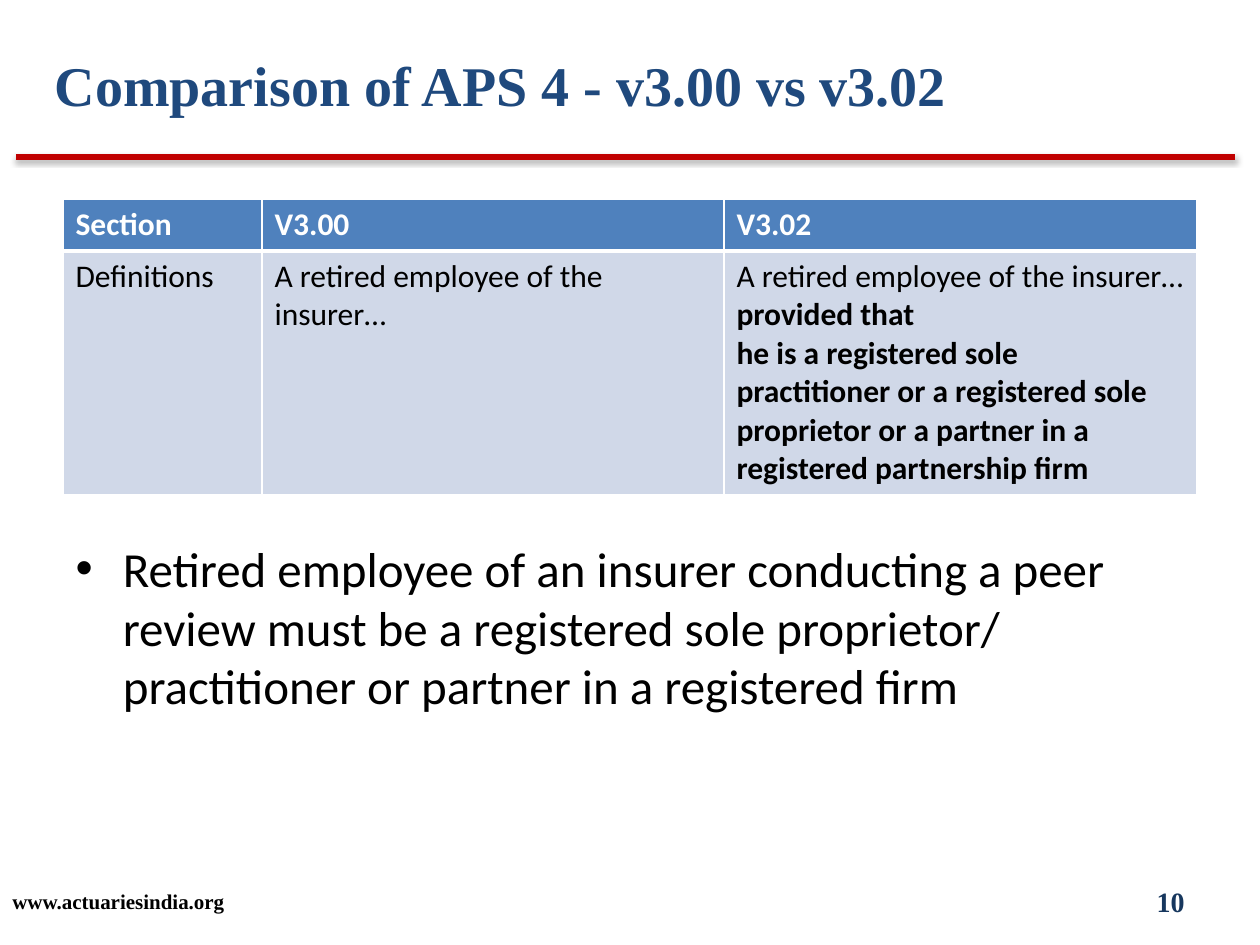
from dataclasses import dataclass

from lxml import etree
from pptx import Presentation
from pptx.dml.color import RGBColor
from pptx.enum.shapes import MSO_CONNECTOR
from pptx.enum.text import MSO_ANCHOR, MSO_AUTO_SIZE, PP_ALIGN
from pptx.oxml import parse_xml
from pptx.oxml.ns import nsdecls, qn
from pptx.util import Pt

STRAIGHT = MSO_CONNECTOR.STRAIGHT
MIDDLE, TOP = MSO_ANCHOR.MIDDLE, MSO_ANCHOR.TOP
LEFT, RIGHT = PP_ALIGN.LEFT, PP_ALIGN.RIGHT
NO_AUTOFIT = MSO_AUTO_SIZE.NONE
EMU_PER_PIXEL = 914400 / 126


@dataclass(frozen=True)
class Theme:
    serif: str = "Times New Roman"
    sans: str = "Calibri"
    title: str = "1F497D"
    rule: str = "C00000"
    number: str = "17375E"
    text: str = "000000"
    white: str = "FFFFFF"
    header_fill: str = "4F81BD"
    body_fill: str = "D0D8E8"
    title_size: int = 32
    list_size: int = 28
    table_size: int = 18
    number_size: int = 16
    footer_size: int = 12


THEME = Theme()

COLUMN_WIDTHS = [199, 462, 473]
ROW_HEIGHTS = [52, 239]
RETIRED = "A retired employee of the insurer…"
HEADER = ["Section", "V3.00", "V3.02"]
DEFINITIONS = [
    [[("Definitions", False)]],
    [[(RETIRED, False)]],
    [
        [(RETIRED + " ", False), ("provided that", True)],
        [
            ("he is a registered sole", True),
            None,
            ("practitioner or a registered sole proprietor or a partner "
             "in a registered partnership firm", True),
        ],
    ],
]


def px(value):
    return round(value * EMU_PER_PIXEL)


def add_run(paragraph, text, font, size, color, bold=False):
    run = paragraph.add_run()
    run.text = text
    run.font.name = font
    run.font.size = Pt(size)
    run.font.bold = bold
    run.font.color.rgb = RGBColor.from_string(color)


def place(shape, left, top, width, height):
    shape.left, shape.top = px(left), px(top)
    shape.width, shape.height = px(width), px(height)


def prepare_frame(shape, anchor, alignment=LEFT):
    frame = shape.text_frame
    frame.word_wrap = True
    frame.auto_size = NO_AUTOFIT
    frame.vertical_anchor = anchor
    paragraph = frame.paragraphs[0]
    paragraph.alignment = alignment
    paragraph.space_before = Pt(0)
    return paragraph


def fill_title(slide, text):
    title = slide.shapes.title
    place(title, 42, 42, 1008, 84)
    paragraph = prepare_frame(title, MIDDLE)
    add_run(paragraph, text, THEME.serif, THEME.title_size, THEME.title, True)


def fill_list(slide, text):
    body = slide.placeholders[1]
    place(body, 63, 532, 1134, 311)
    paragraph = prepare_frame(body, TOP)
    add_run(paragraph, text, THEME.sans, THEME.list_size, THEME.text)


def add_label(slide, box, text, size, color, alignment=LEFT):
    label = slide.shapes.add_textbox(*map(px, box))
    paragraph = prepare_frame(label, MIDDLE, alignment)
    add_run(paragraph, text, THEME.serif, size, color, True)


def add_rule(slide, left, right, y):
    rule = slide.shapes.add_connector(STRAIGHT, px(left), px(y), px(right), px(y))
    rule.line.color.rgb = RGBColor.from_string(THEME.rule)
    rule.line.width = Pt(3)
    rule.element.spPr.append(parse_xml(
        f'<a:effectLst {nsdecls("a")}>'
        '<a:outerShdw blurRad="40000" dist="20000" dir="5400000" rotWithShape="0">'
        f'<a:srgbClr val="{THEME.text}"><a:alpha val="38000"/></a:srgbClr>'
        '</a:outerShdw></a:effectLst>'))


def add_border(cell, side, points):
    properties = cell._tc.get_or_add_tcPr()
    line = etree.SubElement(properties, qn(f"a:ln{side}"), w=str(Pt(points)))
    fill = etree.SubElement(line, qn("a:solidFill"))
    etree.SubElement(fill, qn("a:srgbClr"), val=THEME.white)


def fill_cell(cell, paragraphs, is_header):
    bottom = top = 1
    if is_header:
        bottom = 3
    else:
        top = 3
    for side, points in (("L", 1), ("R", 1), ("T", top), ("B", bottom)):
        add_border(cell, side, points)
    cell.fill.solid()
    cell.fill.fore_color.rgb = RGBColor.from_string(
        THEME.header_fill if is_header else THEME.body_fill)
    color = THEME.white if is_header else THEME.text
    frame = cell.text_frame
    for index, runs in enumerate(paragraphs):
        paragraph = frame.add_paragraph() if index else frame.paragraphs[0]
        for run in runs:
            if run is None:
                paragraph.add_line_break()
            else:
                text, bold = run
                add_run(paragraph, text, THEME.sans, THEME.table_size, color, bold)


def add_comparison_table(slide, left, top):
    rows = [[[[(text, True)]] for text in HEADER], DEFINITIONS]
    frame = slide.shapes.add_table(
        len(rows), len(HEADER), px(left), px(top),
        px(sum(COLUMN_WIDTHS)), px(sum(ROW_HEIGHTS)))
    table = frame.table
    for column, width in zip(table.columns, COLUMN_WIDTHS):
        column.width = px(width)
    for row, height in zip(table.rows, ROW_HEIGHTS):
        row.height = px(height)
    for row_index, row in enumerate(rows):
        for column_index, paragraphs in enumerate(row):
            fill_cell(table.cell(row_index, column_index), paragraphs, row_index == 0)


def main():
    presentation = Presentation()
    presentation.slide_width, presentation.slide_height = px(1260), px(945)
    slide = presentation.slides.add_slide(presentation.slide_layouts[1])
    add_rule(slide, 16, 1235, 157)
    add_label(slide, (0, 876, 1260, 50), "www.actuariesindia.org",
              THEME.footer_size, THEME.text)
    add_label(slide, (903, 876, 294, 50), "10",
              THEME.number_size, THEME.number, RIGHT)
    fill_title(slide, "Comparison of APS 4 - v3.00 vs v3.02")
    add_comparison_table(slide, 63, 199)
    fill_list(slide, "Retired employee of an insurer conducting a peer review must be "
                     "a registered sole proprietor/ practitioner or partner in a "
                     "registered firm")
    presentation.save("out.pptx")


if __name__ == "__main__":
    main()
